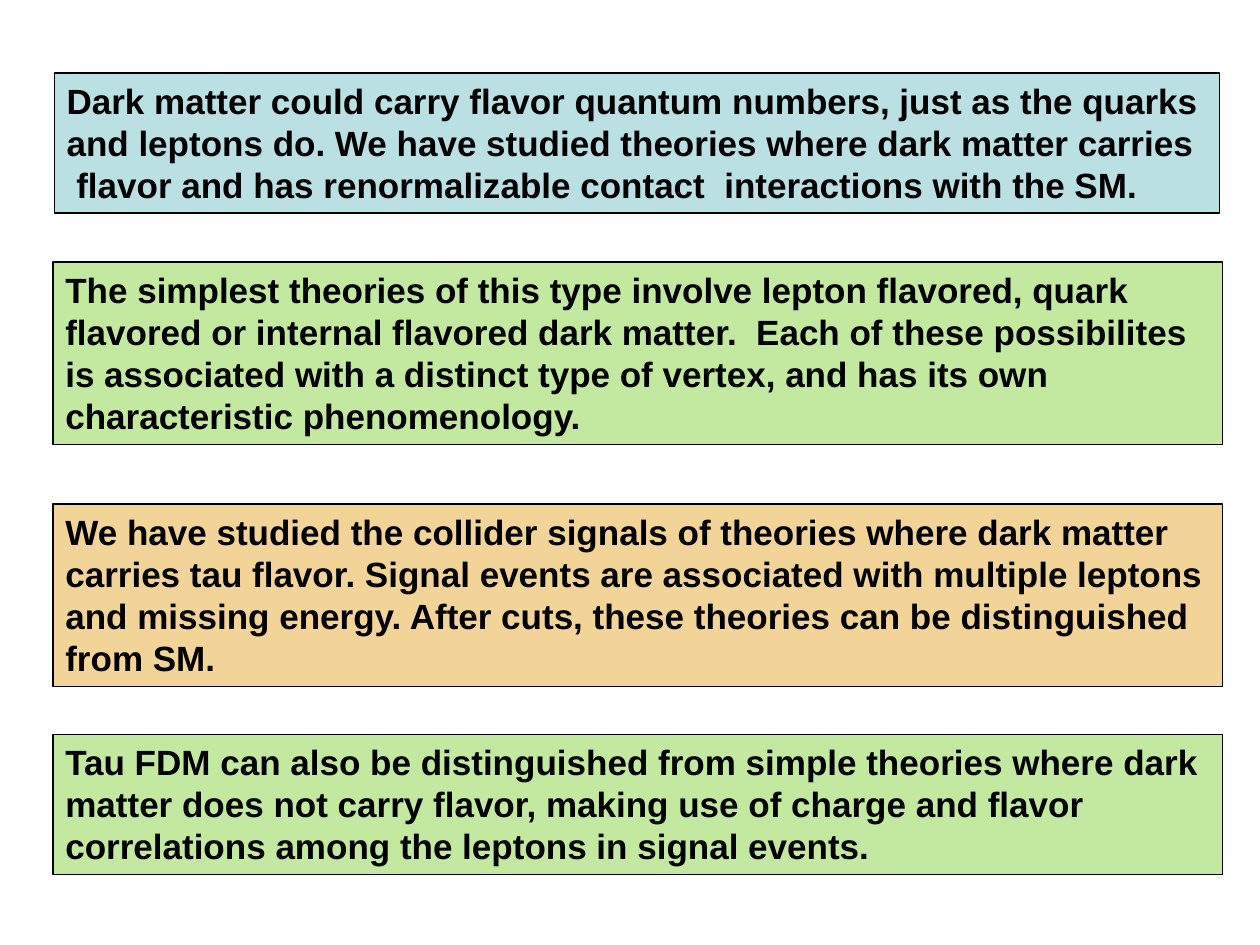
from pptx import Presentation
from pptx.dml.color import RGBColor
from pptx.enum.shapes import MSO_SHAPE
from pptx.enum.text import MSO_ANCHOR, MSO_AUTO_SIZE, PP_ALIGN
from pptx.util import Inches, Pt

BLACK = RGBColor(0x00, 0x00, 0x00)
BLUE = RGBColor(0xBB, 0xE0, 0xE3)
GREEN = RGBColor(0xC3, 0xE9, 0xA1)
ORANGE = RGBColor(0xF2, 0xD4, 0x98)

# Conclusions: left, top, width, fill, wrap, lines
CONCLUSIONS = [
    (0.43, 0.58, 9.25, BLUE, False, [
        "Dark matter could carry flavor quantum numbers, just as the quarks",
        "and leptons do. We have studied theories where dark matter carries",
        " flavor and has renormalizable contact  interactions with the SM.",
    ]),
    (0.42, 2.08, 9.28, GREEN, True, [
        "The simplest theories of this type involve lepton flavored, quark",
        "flavored or internal flavored dark matter.  Each of these possibilites",
        "is associated with a distinct type of vertex, and has its own",
        "characteristic phenomenology.",
    ]),
    (0.42, 4, 9.28, ORANGE, True, [
        "We have studied the collider signals of theories where dark matter",
        "carries tau flavor. Signal events are associated with multiple leptons",
        "and missing energy. After cuts, these theories can be distinguished",
        "from SM.",
    ]),
    (0.42, 5.83, 9.28, GREEN, True, [
        "Tau FDM can also be distinguished from simple theories where dark",
        "matter does not carry flavor, making use of charge and flavor",
        "correlations among the leptons in signal events.",
    ]),
]
LINE_HEIGHT = 0.34
PADDING = 0.09  # rest of the box height beyond its lines

prs = Presentation()
prs.slide_width, prs.slide_height = Inches(10), Inches(7.5)
s = prs.slides.add_slide(prs.slide_layouts[6])

for left, top, width, fill, wrap, lines in CONCLUSIONS:
    # Box, as tall as its lines
    height = LINE_HEIGHT * len(lines) + PADDING
    sp = s.shapes.add_shape(MSO_SHAPE.RECTANGLE, Inches(left), Inches(top),
                            Inches(width), Inches(height))
    sp.shadow.inherit = False
    sp.fill.solid()
    sp.fill.fore_color.rgb = fill
    sp.line.color.rgb = BLACK
    sp.line.width = Pt(0.75)

    # Text, one paragraph a line
    tf = sp.text_frame
    tf.word_wrap = wrap
    tf.auto_size = MSO_AUTO_SIZE.SHAPE_TO_FIT_TEXT
    tf.vertical_anchor = MSO_ANCHOR.TOP
    for i, line in enumerate(lines):
        p = tf.add_paragraph() if i else tf.paragraphs[0]
        p.alignment = PP_ALIGN.LEFT
        r = p.add_run()
        r.text = line
        r.font.name = "Arial"
        r.font.size = Pt(20)
        r.font.bold = True
        r.font.color.rgb = BLACK

prs.save("out.pptx")
